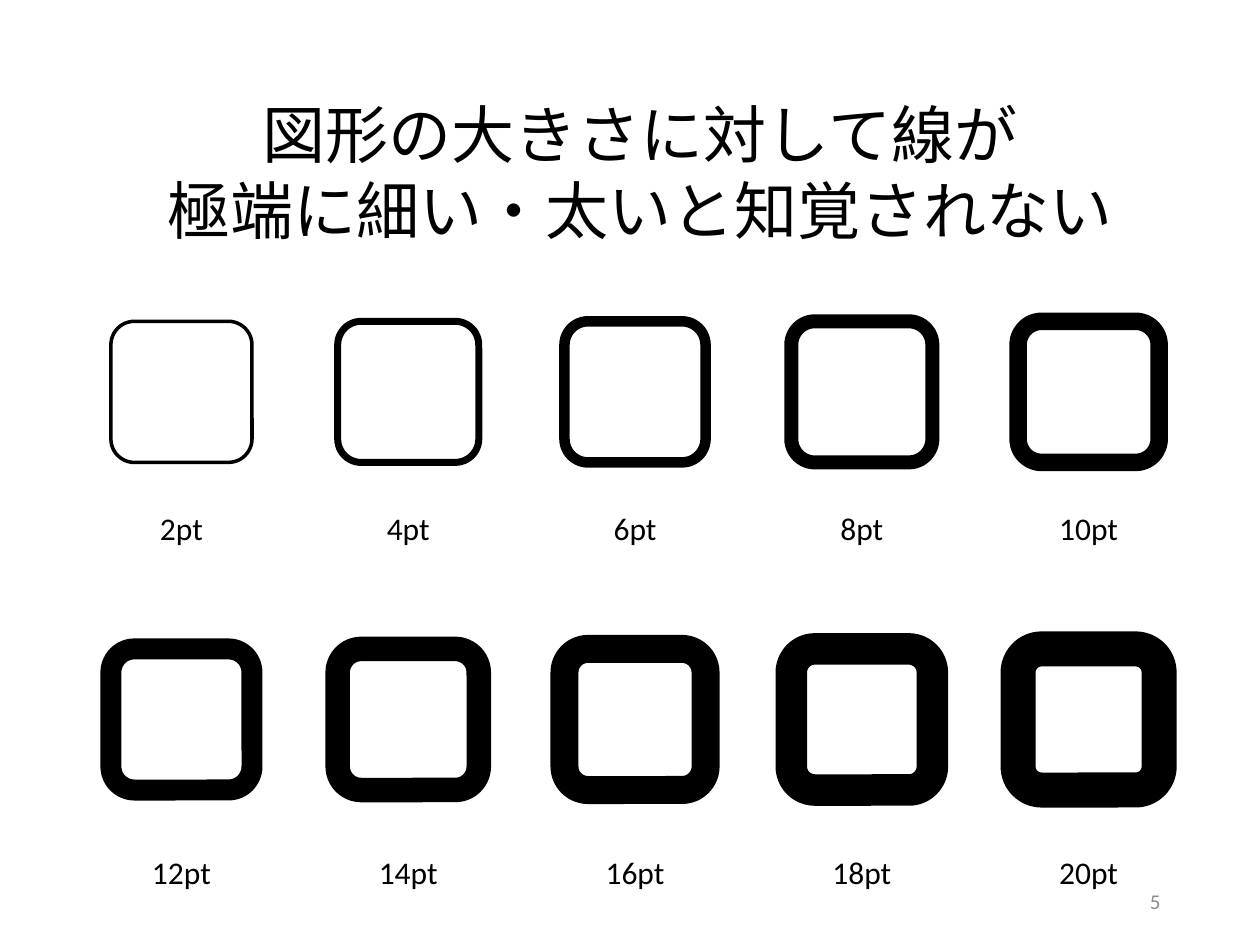
from pptx import Presentation
from pptx.dml.color import RGBColor
from pptx.enum.shapes import MSO_SHAPE
from pptx.enum.text import MSO_ANCHOR, MSO_AUTO_SIZE, PP_ALIGN
from pptx.util import Inches, Pt

ROUNDED = MSO_SHAPE.ROUNDED_RECTANGLE
CENTER, RIGHT = PP_ALIGN.CENTER, PP_ALIGN.RIGHT
TOP, MIDDLE = MSO_ANCHOR.TOP, MSO_ANCHOR.MIDDLE
GROW, FIXED = MSO_AUTO_SIZE.SHAPE_TO_FIT_TEXT, MSO_AUTO_SIZE.NONE

BLACK, GRAY = "000000", "8C8C8C"
COLUMNS, COLUMN_STEP = 5, 1.8
SQUARE_SIDE = 1.12
LABEL_WIDTH, LABEL_HEIGHT = 1.39, 0.4


def color(hex_value):
    return RGBColor.from_string(hex_value)


def add_text(slide, box, lines, size, align=CENTER, ink=BLACK, anchor=TOP, fit=GROW):
    frame = slide.shapes.add_textbox(*map(Inches, box)).text_frame
    frame_format = {"word_wrap": True, "auto_size": fit, "vertical_anchor": anchor}
    for name, value in frame_format.items():
        setattr(frame, name, value)
    for index, line in enumerate(lines):
        paragraph = frame.add_paragraph() if index else frame.paragraphs[0]
        paragraph.alignment = align
        run = paragraph.add_run()
        run.text = line
        for name, value in {"name": "Calibri", "size": Pt(size)}.items():
            setattr(run.font, name, value)
        run.font.color.rgb = color(ink)


def add_sample(slide, left, top, weight, label_top):
    """Outlined square with its line weight centred below it."""
    square = slide.shapes.add_shape(
        ROUNDED, *map(Inches, (left, top, SQUARE_SIDE, SQUARE_SIDE)))
    square.shadow.inherit = False
    square.fill.background()
    square.line.color.rgb = color(BLACK)
    square.line.width = Pt(weight)
    label_left = left + (SQUARE_SIDE - LABEL_WIDTH) / 2
    add_text(slide, (label_left, label_top, LABEL_WIDTH, LABEL_HEIGHT),
             [f"{weight}pt"], 18)


def add_sample_row(slide, left, top, label_top, weights):
    for column, weight in enumerate(weights):
        add_sample(slide, left + column * COLUMN_STEP, top, weight, label_top)


def main():
    presentation = Presentation()
    presentation.slide_width = Inches(10)
    presentation.slide_height = Inches(7.5)
    slide = presentation.slides.add_slide(presentation.slide_layouts[6])

    add_text(slide, (0.88, 0.71, 8.4, 1.31),
             ["図形の大きさに対して線が", "極端に細い・太いと知覚されない"], 36)
    weights = range(2, 21, 2)
    add_sample_row(slide, 0.88, 2.55, 3.99, weights[:COLUMNS])
    add_sample_row(slide, 0.88, 5.15, 6.72, weights[COLUMNS:])
    add_text(slide, (7.06, 6.95, 2.25, 0.4), ["5"], 12, RIGHT, GRAY, MIDDLE, FIXED)

    presentation.save("out.pptx")


if __name__ == "__main__":
    main()
